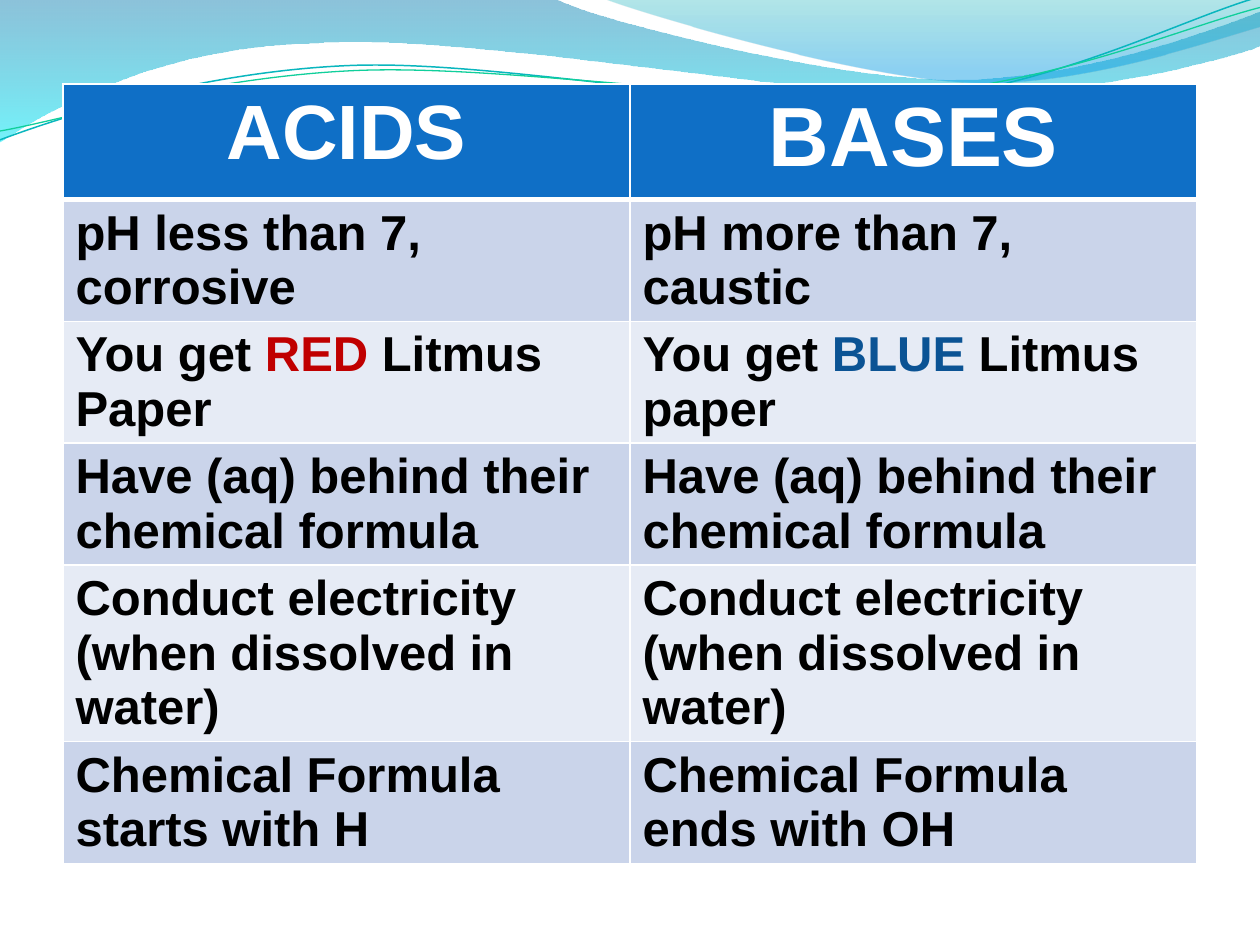
import math

import lxml.etree
import pptx
import pptx.dml.color
import pptx.enum.text
import pptx.oxml
import pptx.oxml.ns
import pptx.util

Inches = pptx.util.Inches
qn = pptx.oxml.ns.qn

LEFT_WAVE = [
    (0, 0), (4.4, -0.01),
    (4.76, 0.17, 6.64, 0.63, 7.58, 0.63), (8.53, 0.63, 9.58, 0.26, 10, 0.09),
    (10.01, 0.36),
    (9.83, 0.44, 8.7, 0.76, 7.46, 0.75), (6.22, 0.75, 3.82, 0.28, 2.57, 0.34),
    (1.29, 0.36, 0.46, 0.83, -0.01, 1.13), (0, 0),
]
RIGHT_WAVE = [
    (0, 0), (0.3, 0.12, 2.03, 0.63, 2.9, 0.66),
    (3.77, 0.7, 4.82, 0.33, 5.21, 0.22), (5.21, 0.01), (0, 0),
]
TEAL_STRAND = [
    (0, 1.11), (0.48, 0.93, 1.58, 0.57, 2.77, 0.52),
    (3.95, 0.47, 5.93, 0.89, 7.13, 0.8), (8.33, 0.71, 9.38, 0.15, 9.98, -0.02),
]
GREEN_STRAND = [
    (0, 1.04), (0.47, 0.96, 1.64, 0.61, 2.83, 0.56),
    (4.03, 0.51, 5.97, 0.84, 7.17, 0.75), (8.36, 0.67, 9.41, 0.21, 10, 0.06),
]
HEADINGS = [("ACIDS", 44), ("BASES", 48)]
FACTS = [
    (["pH less than 7, corrosive"], ["pH more than 7, caustic"]),
    (["You get ", ("RED", "C00000"), " Litmus Paper"],
     ["You get ", ("BLUE", "0B5394"), " Litmus paper"]),
    (["Have (aq) behind their chemical formula"],) * 2,
    (["Conduct electricity (when dissolved in water)"],) * 2,
    (["Chemical Formula starts with H"], ["Chemical Formula ends with OH"]),
]


def color(value):
    """Turn a hex string into a colour."""
    return pptx.dml.color.RGBColor.from_string(value)


def split_points(segment):
    """Split a flat segment into its x, y pairs."""
    return list(zip(segment[::2], segment[1::2]))


def draw_path(page, left, top, segments, close):
    """Draw a freeform of lines and cubic curves relative to left and top."""
    spots = [(Inches(left + x), Inches(top + y))
             for segment in segments for x, y in split_points(segment)]
    builder = page.shapes.build_freeform(*spots[0], scale=1.0)
    builder.add_line_segments(spots[1:], close=close)
    shape = builder.convert_to_shape()
    steps = iter(list(shape._element.iter(qn("a:lnTo"))))
    for segment in segments[1:]:
        first = next(steps)
        if len(segment) == 6:
            curve = lxml.etree.Element(qn("a:cubicBezTo"))
            first.addprevious(curve)
            for step in (first, next(steps), next(steps)):
                curve.append(step[0])
                step.getparent().remove(step)
    shape.shadow.inherit = False
    shape.fill.background()
    return shape


def add_wave(page, left, top, segments, stops):
    """Add a translucent wave shaded from top to bottom."""
    shape = draw_path(page, left, top, segments, True)
    shape.line.fill.background()
    gradient = lxml.etree.Element(qn("a:gradFill"), rotWithShape="1")
    stop_list = lxml.etree.SubElement(gradient, qn("a:gsLst"))
    for position, value, opacity in stops:
        stop = lxml.etree.SubElement(stop_list, qn("a:gs"), pos=str(position * 1000))
        tint = lxml.etree.SubElement(stop, qn("a:srgbClr"), val=value)
        lxml.etree.SubElement(tint, qn("a:alpha"), val=str(opacity * 1000))
    lxml.etree.SubElement(gradient, qn("a:lin"), ang="5400000", scaled="0")
    properties = shape._element.spPr
    properties.replace(properties.find(qn("a:noFill")), gradient)


def add_strand(page, left, top, segments, center, value, width):
    """Add a thin curve tilted about its center."""
    tilt = 357.3
    cosine, sine = math.cos(math.radians(-tilt)), math.sin(math.radians(-tilt))
    middle_x, middle_y = center
    level = []
    for segment in segments:
        flat = []
        for x, y in split_points(segment):
            across, down = x - middle_x, y - middle_y
            flat += [middle_x + across * cosine - down * sine,
                     middle_y + across * sine + down * cosine]
        level.append(flat)
    shape = draw_path(page, left, top, level, False)
    shape.rotation = tilt
    shape.line.color.rgb = color(value)
    shape.line.width = pptx.util.Pt(width)


def add_banner(page, left, top):
    """Add the waves and strands along the top of the page."""
    add_wave(page, left, top, LEFT_WAVE, [(0, "0079AD", 45), (100, "00E9F7", 55)])
    add_wave(page, left + 4.79, top - 0.01, RIGHT_WAVE,
             [(0, "00ABB4", 30), (80, "0099E4", 45), (100, "0099E4", 45)])
    add_strand(page, left, top, TEAL_STRAND, (4.99, 0.58), "09B6BE", 0.85)
    add_strand(page, left, top, GREEN_STRAND, (5, 0.59), "10CF9B", 0.75)


def set_borders(cell, widths):
    """Give a cell white borders of the given widths in points."""
    properties = cell._tc.get_or_add_tcPr()
    for index, (side, width) in enumerate(widths.items()):
        line = lxml.etree.Element(qn("a:ln" + side), w=str(pptx.util.Pt(width)))
        fill = lxml.etree.SubElement(line, qn("a:solidFill"))
        lxml.etree.SubElement(fill, qn("a:srgbClr"), val="FFFFFF")
        properties.insert(index, line)


def fill_cell(cell, fill, spans, text_color, size, align=None):
    """Fill a cell with bold spans, some with their own colour."""
    cell.fill.solid()
    cell.fill.fore_color.rgb = color(fill)
    para = cell.text_frame.paragraphs[0]
    para.alignment = align
    font_format = {"name": "Arial", "size": pptx.util.Pt(size), "bold": True}
    for part in spans:
        text, value = (part, text_color) if isinstance(part, str) else part
        span = para.add_run()
        span.text = text
        for name, setting in font_format.items():
            setattr(span.font, name, setting)
        span.font.color.rgb = color(value)


def add_comparison(page, left, top, width, height):
    """Add the table that compares acids with bases."""
    frame = page.shapes.add_table(
        len(FACTS) + 1, len(HEADINGS),
        Inches(left), Inches(top), Inches(width), Inches(height))
    table = frame.table
    for column, (heading, size) in enumerate(HEADINGS):
        cell = table.cell(0, column)
        fill_cell(cell, "0F6FC6", [heading], "FFFFFF", size,
                  pptx.enum.text.PP_ALIGN.CENTER)
        set_borders(cell, {"L": 1, "R": 1, "T": 1, "B": 3})
    for row, facts in enumerate(FACTS, start=1):
        for column, spans in enumerate(facts):
            cell = table.cell(row, column)
            fill_cell(cell, "CAD4EA" if row % 2 else "E6EBF5", spans, "000000", 28)
            set_borders(cell, {"L": 1, "R": 1, "T": 3 if row == 1 else 1, "B": 1})


def main():
    """Build the deck and save it."""
    deck = pptx.Presentation()
    deck.slide_width, deck.slide_height = Inches(10), Inches(7.5)
    page = deck.slides.add_slide(deck.slide_layouts[6])
    add_banner(page, 0, 0)
    add_comparison(page, 0.5, 2 / 3, 9, 5.5)
    deck.save("out.pptx")


if __name__ == "__main__":
    main()
